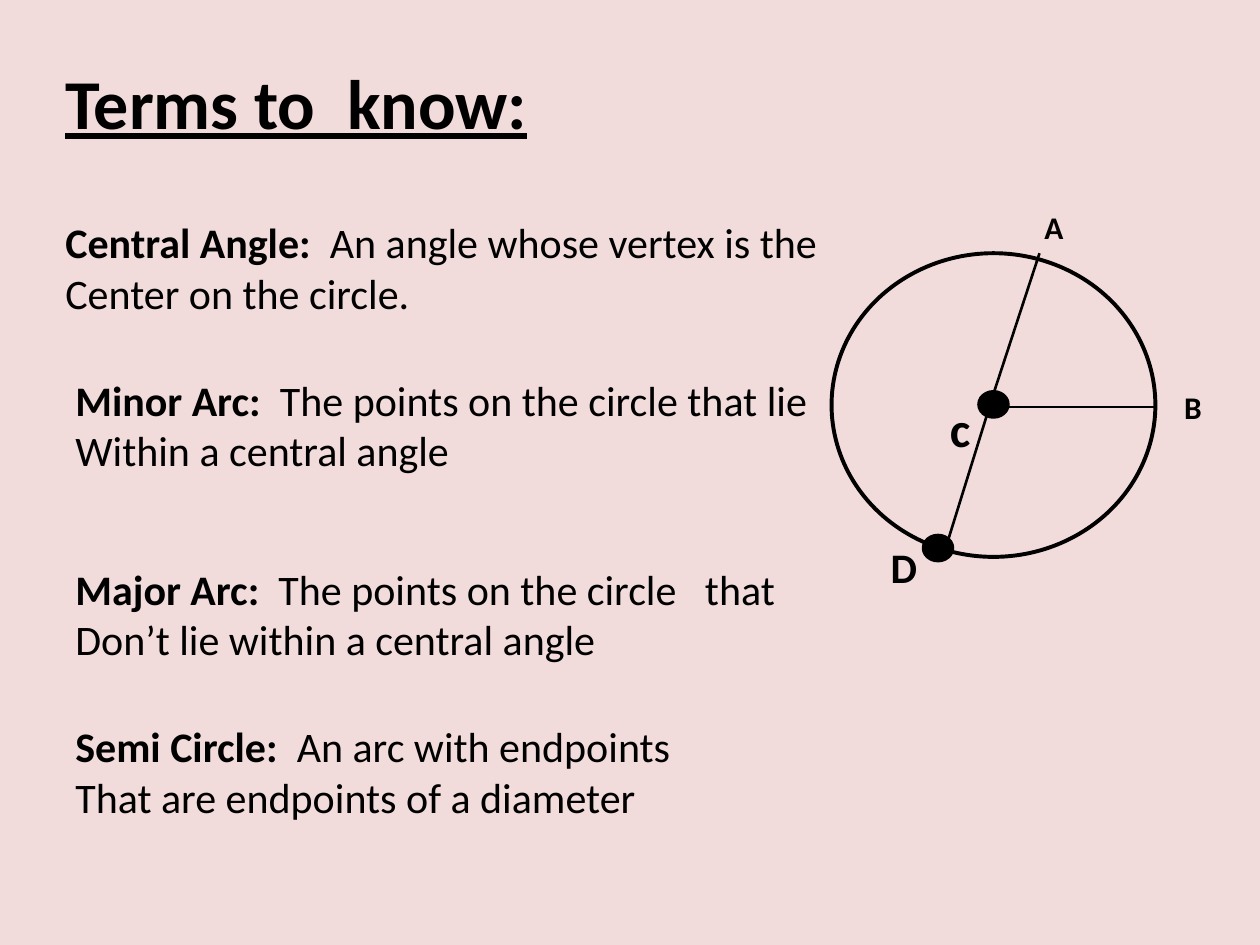
from pptx import Presentation
from pptx.dml.color import RGBColor
from pptx.enum.shapes import MSO_CONNECTOR, MSO_SHAPE
from pptx.enum.text import MSO_AUTO_SIZE
from pptx.oxml.ns import qn
from pptx.util import Inches, Pt
from lxml import etree

STRAIGHT = MSO_CONNECTOR.STRAIGHT
OVAL = MSO_SHAPE.OVAL
FIT_SHAPE = MSO_AUTO_SIZE.SHAPE_TO_FIT_TEXT

THEME = {
    "font": "Calibri",
    "ink": RGBColor(0x00, 0x00, 0x00),
    "background": RGBColor(0xF2, 0xDC, 0xDB),
    "title": 40, "body": 24,
    "circle_line": 2.25, "dot_line": 2, "radius_line": 1.5,
}

TITLE = ("Terms to  know:", (0.42, 0.42, 3.91, 0.77))

# term, rest of first line, second line, (left, top, width)
DEFINITIONS = [
    ("Central Angle:  ", "An angle whose vertex is the",
     "Center on the circle.", (0.42, 1.67, 6.18)),
    ("Minor Arc:  ", "The points on the circle that lie",
     "Within a central angle", (0.5, 2.92, 6.1)),
    ("Major Arc:  ", "The points on the circle   that",
     "Don’t lie within a central angle", (0.5, 4.42, 5.77)),
    ("Semi Circle:  ", "An arc with endpoints",
     "That are endpoints of a diameter", (0.5, 5.67, 4.93)),
]
DEFINITION_HEIGHT = 0.91

CIRCLE = (6.6, 2.01, 2.57, 2.41)
DOT_SIZE = (0.23, 0.2)
DOTS = [(7.77, 3.11), (7.33, 4.25)]
CENTER = (7.89, 3.11)
RADII = [
    (CENTER, (8.25, 2.01)),
    ((7.89, 3.23), (9.17, 3.23)),
    (CENTER, (7.53, 4.27)),
]
POINT_LABELS = [
    ("c", 28, (7.44, 3.11, 0.37, 0.57)),
    ("D", 24, (6.97, 4.25, 0.41, 0.5)),
    ("A", 18, (8.19, 1.6, 0.35, 0.4)),
    ("B", 18, (9.3, 3.03, 0.34, 0.4)),
]


def add_text(slide, box, lines, size, underline=None):
    """Add a text box; each line is a list of (text, bold) runs."""
    shape = slide.shapes.add_textbox(*map(Inches, box))
    frame = shape.text_frame
    frame.word_wrap = False
    frame.auto_size = FIT_SHAPE
    for index, runs in enumerate(lines):
        paragraph = frame.add_paragraph() if index else frame.paragraphs[0]
        font = paragraph.font
        font.name = THEME["font"]
        font.size = Pt(size)
        font.color.rgb = THEME["ink"]
        font.underline = underline
        for text, bold in runs:
            run = paragraph.add_run()
            run.text = text
            run.font.bold = bold


def add_ellipse(slide, box, line_width, filled):
    shape = slide.shapes.add_shape(OVAL, *map(Inches, box))
    shape.shadow.inherit = False
    if filled:
        shape.fill.solid()
        shape.fill.fore_color.rgb = THEME["ink"]
    else:
        shape.fill.background()
    shape.line.color.rgb = THEME["ink"]
    shape.line.width = Pt(line_width)


def add_radius(slide, start, end):
    connector = slide.shapes.add_connector(STRAIGHT, *map(Inches, start + end))
    connector.line.color.rgb = THEME["ink"]
    connector.line.width = Pt(THEME["radius_line"])
    etree.SubElement(connector._element.spPr, qn("a:effectLst"))


def main():
    presentation = Presentation()
    presentation.slide_width = Inches(10)
    presentation.slide_height = Inches(7.5)
    slide = presentation.slides.add_slide(presentation.slide_layouts[6])
    slide.background.fill.solid()
    slide.background.fill.fore_color.rgb = THEME["background"]

    title, title_box = TITLE
    add_text(slide, title_box, [[(title, True)]], THEME["title"], underline=True)
    for term, meaning, continuation, place in DEFINITIONS:
        lines = [[(term, True), (meaning, False)], [(continuation, False)]]
        add_text(slide, place + (DEFINITION_HEIGHT,), lines, THEME["body"])

    add_ellipse(slide, CIRCLE, THEME["circle_line"], filled=False)
    for start, end in RADII:
        add_radius(slide, start, end)
    for corner in DOTS:
        add_ellipse(slide, corner + DOT_SIZE, THEME["dot_line"], filled=True)
    for letter, size, box in POINT_LABELS:
        add_text(slide, box, [[(letter, True)]], size)

    presentation.save("out.pptx")


if __name__ == "__main__":
    main()
